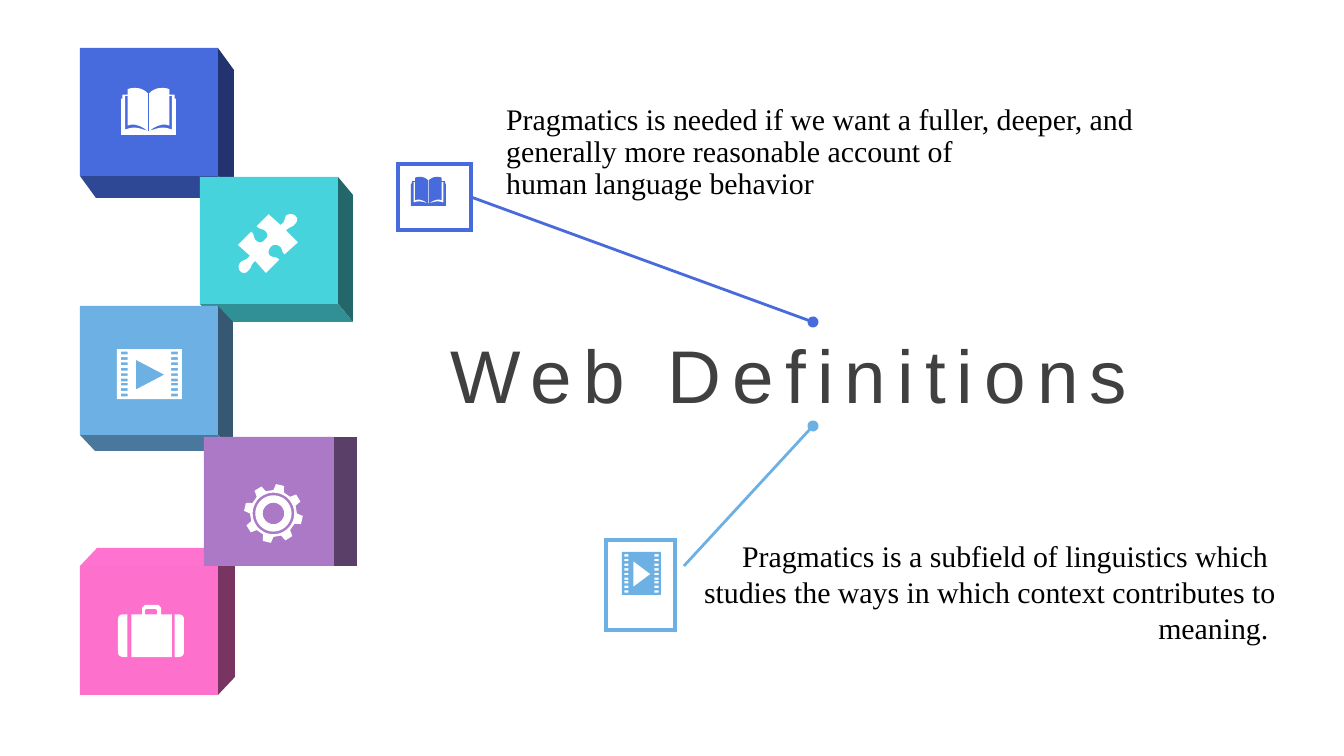
from dataclasses import dataclass
from math import cos, radians, sin

from lxml import etree
from pptx import Presentation
from pptx.dml.color import RGBColor
from pptx.enum.shapes import MSO_CONNECTOR, MSO_SHAPE
from pptx.enum.text import MSO_AUTO_SIZE, PP_ALIGN
from pptx.oxml.ns import qn
from pptx.util import Pt

RECTANGLE = MSO_SHAPE.RECTANGLE
STRAIGHT = MSO_CONNECTOR.STRAIGHT
FIT_SHAPE = MSO_AUTO_SIZE.SHAPE_TO_FIT_TEXT
LEFT, RIGHT = PP_ALIGN.LEFT, PP_ALIGN.RIGHT
RIGHT_SIDE = 3
PX = 914400 / 134.4  # EMU in one px
FINE = 10  # drawing steps in one icon grid unit


@dataclass(frozen=True)
class Theme:
    blue: str = "476ADD"
    blue_side: str = "22336F"
    blue_base: str = "2F4896"
    teal: str = "47D3DC"
    teal_side: str = "23676B"
    teal_base: str = "309095"
    sky: str = "6DB0E4"
    sky_side: str = "365872"
    sky_base: str = "4A789C"
    pink: str = "FD70CC"
    pink_side: str = "793561"
    pink_top: str = "FF72D0"
    purple: str = "AC79C7"
    purple_side: str = "5A3F69"
    white: str = "FFFFFF"
    body: str = "000000"
    heading: str = "404040"
    body_font: str = "Times New Roman"
    heading_font: str = "Arial"
    body_size: int = 16
    heading_size: int = 40
    heading_spacing: int = 6
    frame_width: int = 2
    line_width: float = 1.5


def emu(*lengths: int) -> list[int]:
    return [round(length * PX) for length in lengths]


@dataclass(frozen=True)
class Box:
    left: int
    top: int
    width: int
    height: int

    def emu(self) -> list[int]:
        return emu(self.left, self.top, self.width, self.height)


@dataclass(frozen=True)
class Icon:
    """Contours on a grid; a step is a point, or three points of a curve."""
    width: int
    height: int
    contours: list


@dataclass(frozen=True)
class Cube:
    front: Box
    depth: tuple[int, int]
    colour: str
    side: str
    base: str
    icon: Icon
    icon_box: Box


@dataclass(frozen=True)
class TextBlock:
    box: Box
    paragraphs: list[str]
    font: str
    size: int
    colour: str
    align: PP_ALIGN = LEFT
    line_spacing: float | None = None
    letter_spacing: int = 0
    wrap: bool = True


# Icon outlines
def mirror(step: tuple, width: int) -> tuple:
    if len(step) == 3:
        return tuple(mirror(point, width) for point in step)
    return width - step[0], step[1]


def both_sides(contours: list, width: int) -> list:
    return contours + [[mirror(s, width) for s in c] for c in contours]


def block(left: int, top: int, right: int, bottom: int) -> list:
    return [(left, top), (right, top), (right, bottom), (left, bottom)]


def polar(radius: float, degrees: float) -> tuple:
    return 22 + radius * sin(radians(degrees)), 22 - radius * cos(radians(degrees))


PAGE = [(20, 4), ((17, 1), (14, 0), (10, 0)), ((9, 0), (7, 0), (5, 1)), (5, 5),
        (1, 5), (1, 8), (0, 8), (0, 35), (20, 35)]
PAGE_GAP = [(20, 32), ((15, 28), (9, 26), (5, 28)), (5, 6), (3, 6), (3, 31),
            ((10, 28), (13, 30), (20, 32))]
BOOK = Icon(41, 35, both_sides([PAGE, PAGE_GAP], 41) + [block(20, 32, 21, 35)])

SPROCKETS = [block(3, y, 8, y + 2) for y in (2, 6, 10, 14, 18, 22, 25, 29, 33)]
FILM = Icon(48, 37, [block(0, 0, 48, 37), [(14, 8), (14, 30), (35, 19)]]
            + both_sides(SPROCKETS, 48))

CASE_END = [(7, 7), (7, 39), (4, 39), ((1, 39), (0, 37), (0, 35)), (0, 11),
            ((0, 9), (1, 7), (4, 7))]
CASE_BODY = [(10, 7), (18, 7), (18, 2), (20, 0), (30, 0), (32, 2), (32, 7),
             (40, 7), (40, 39), (10, 39)]
HANDLE_GAP = [(20, 7), (20, 4), (21, 3), (28, 3), (29, 4), (29, 7)]
SUITCASE = Icon(49, 39, both_sides([CASE_END], 49) + [CASE_BODY, HANDLE_GAP])

TEETH = [polar(radius, 13 + 45 * tooth + turn) for tooth in range(8)
         for radius, turn in ((17.5, -13), (22, -8), (22, 8), (17.5, 13))]
GEAR = Icon(44, 44, [TEETH] + [[polar(radius, angle) for angle in range(0, 360, 10)]
                               for radius in (15.5, 13.5, 8)])

PUZZLE = Icon(45, 45, [[
    (43, 2), ((45, 4), (45, 6), (43, 8)), ((41, 11), (39, 10), (36, 13)),
    (45, 22), (35, 31), ((32, 29), (34, 26), (31, 25)),
    ((29, 23), (26, 24), (25, 25)), ((23, 27), (22, 30), (24, 32)),
    ((27, 34), (28, 32), (31, 35)), (21, 45), (13, 36),
    ((9, 39), (11, 40), (8, 43)), ((6, 46), (3, 45), (2, 44)),
    ((0, 42), (0, 39), (2, 37)), ((4, 35), (6, 36), (9, 32)),
    (0, 24), (10, 14), ((13, 16), (11, 19), (14, 21)),
    ((16, 23), (19, 22), (20, 20)), ((22, 19), (23, 16), (21, 14)),
    ((18, 11), (17, 13), (14, 10)), (23, 1), (32, 9),
    ((36, 6), (34, 6), (36, 2)), ((39, 0), (42, 1), (43, 2))]])


# Drawing
def flatten(contour: list) -> list:
    points = []
    for step in contour:
        if len(step) == 2:
            points.append(step)
            continue
        a, (b, c, d) = points[-1], step
        for t in (0.2, 0.4, 0.6, 0.8, 1):
            u = 1 - t
            points.append(tuple(u**3 * a[i] + 3 * u * u * t * b[i] + 3 * u * t * t * c[i]
                                + t**3 * d[i] for i in (0, 1)))
    return [(round(x * FINE), round(y * FINE)) for x, y in points]


def paint(shape, colour: str) -> None:
    shape.shadow.inherit = False
    shape.fill.solid()
    shape.fill.fore_color.rgb = RGBColor.from_string(colour)
    shape.line.fill.background()


def draw_icon(slide, icon: Icon, box: Box, colour: str) -> None:
    scale = (box.width * PX / icon.width / FINE, box.height * PX / icon.height / FINE)
    first, *others = [flatten(contour) for contour in icon.contours]
    builder = slide.shapes.build_freeform(*first[0], scale=scale)
    builder.add_line_segments(first[1:], close=True)
    for contour in others:
        builder.move_to(*contour[0])
        builder.add_line_segments(contour[1:], close=True)
    paint(builder.convert_to_shape(*emu(box.left, box.top)), colour)


def draw_face(slide, start: tuple, end: tuple, depth: tuple, colour: str) -> None:
    far = [(x + depth[0], y + depth[1]) for x, y in (end, start)]
    builder = slide.shapes.build_freeform(*start, scale=PX)
    builder.add_line_segments([end, *far], close=True)
    paint(builder.convert_to_shape(), colour)


def draw_cube(slide, cube: Cube) -> None:
    front = cube.front
    right, bottom = front.left + front.width, front.top + front.height
    draw_face(slide, (right, front.top), (right, bottom), cube.depth, cube.side)
    if cube.depth[1]:
        edge = bottom if cube.depth[1] > 0 else front.top
        draw_face(slide, (front.left, edge), (right, edge), cube.depth, cube.base)
    paint(slide.shapes.add_shape(RECTANGLE, *front.emu()), cube.colour)


def draw_frame(slide, box: Box, colour: str, theme: Theme):
    frame = slide.shapes.add_shape(RECTANGLE, *box.emu())
    frame.shadow.inherit = False
    frame.fill.background()
    frame.line.color.rgb = RGBColor.from_string(colour)
    frame.line.width = Pt(theme.frame_width)
    etree.SubElement(frame.line._get_or_add_ln(), qn("a:miter"), lim="800000")
    return frame


def draw_pointer(slide, start: tuple, end: tuple, colour: str, theme: Theme):
    pointer = slide.shapes.add_connector(STRAIGHT, *emu(*start, *end))
    pointer.line.color.rgb = RGBColor.from_string(colour)
    pointer.line.width = Pt(theme.line_width)
    etree.SubElement(pointer.line._get_or_add_ln(), qn("a:tailEnd"), type="oval")
    etree.SubElement(pointer._element.spPr, qn("a:effectLst"))
    return pointer


def draw_text(slide, text: TextBlock) -> None:
    frame = slide.shapes.add_textbox(*text.box.emu()).text_frame
    frame.word_wrap = text.wrap
    frame.auto_size = FIT_SHAPE
    for index, words in enumerate(text.paragraphs):
        paragraph = frame.add_paragraph() if index else frame.paragraphs[0]
        paragraph.alignment = text.align
        paragraph.line_spacing = text.line_spacing
        run = paragraph.add_run()
        run.text = words
        run.font.name, run.font.size = text.font, Pt(text.size)
        run.font.color.rgb = RGBColor.from_string(text.colour)
        if text.letter_spacing:
            run.font._element.set("spc", str(text.letter_spacing * 100))


def main() -> None:
    theme = Theme()
    deck = Presentation()
    deck.slide_width, deck.slide_height = emu(1344, 756)
    slide = deck.slides.add_slide(deck.slide_layouts[6])

    # Framed icons and their pointers to the heading
    needed_frame = draw_frame(slide, Box(398, 164, 73, 66), theme.blue, theme)
    needed_pointer = draw_pointer(slide, (471, 197), (813, 322), theme.blue, theme)
    needed_pointer.begin_connect(needed_frame, RIGHT_SIDE)
    draw_pointer(slide, (684, 566), (813, 426), theme.sky, theme)
    draw_icon(slide, BOOK, Box(411, 177, 35, 29), theme.blue)
    draw_frame(slide, Box(606, 540, 69, 90), theme.sky, theme)
    draw_icon(slide, FILM, Box(622, 552, 39, 43), theme.sky)

    # Column of cubes, back to front
    cubes = [
        Cube(Box(80, 48, 138, 128), (16, 22), theme.blue, theme.blue_side,
             theme.blue_base, BOOK, Box(121, 88, 55, 47)),
        Cube(Box(200, 177, 138, 127), (15, 18), theme.teal, theme.teal_side,
             theme.teal_base, PUZZLE, Box(238, 213, 60, 60)),
        Cube(Box(80, 306, 138, 129), (15, 16), theme.sky, theme.sky_side,
             theme.sky_base, FILM, Box(117, 349, 65, 50)),
        Cube(Box(80, 566, 138, 129), (17, -18), theme.pink, theme.pink_side,
             theme.pink_top, SUITCASE, Box(118, 605, 66, 52)),
        Cube(Box(204, 437, 130, 129), (23, 0), theme.purple, theme.purple_side,
             theme.purple_side, GEAR, Box(244, 484, 59, 59)),
    ]
    for cube in cubes:
        draw_cube(slide, cube)
    for cube in cubes:
        draw_icon(slide, cube.icon, cube.icon_box, theme.white)

    # Definitions and heading
    body = (theme.body_font, theme.body_size, theme.body)
    draw_text(slide, TextBlock(Box(493, 98, 672, 116), [
        "Pragmatics is needed if we want a fuller, deeper, and generally more "
        "reasonable account of", "human language behavior"], *body, line_spacing=0.9))
    draw_text(slide, TextBlock(Box(676, 531, 613, 122), [
        "Pragmatics is a subfield of linguistics which ",
        "studies the ways in which context contributes to meaning. "], *body, align=RIGHT))
    draw_text(slide, TextBlock(
        Box(437, 322, 753, 103), ["Web Definitions"], theme.heading_font,
        theme.heading_size, theme.heading, letter_spacing=theme.heading_spacing, wrap=False))
    deck.save("out.pptx")


if __name__ == "__main__":
    main()
